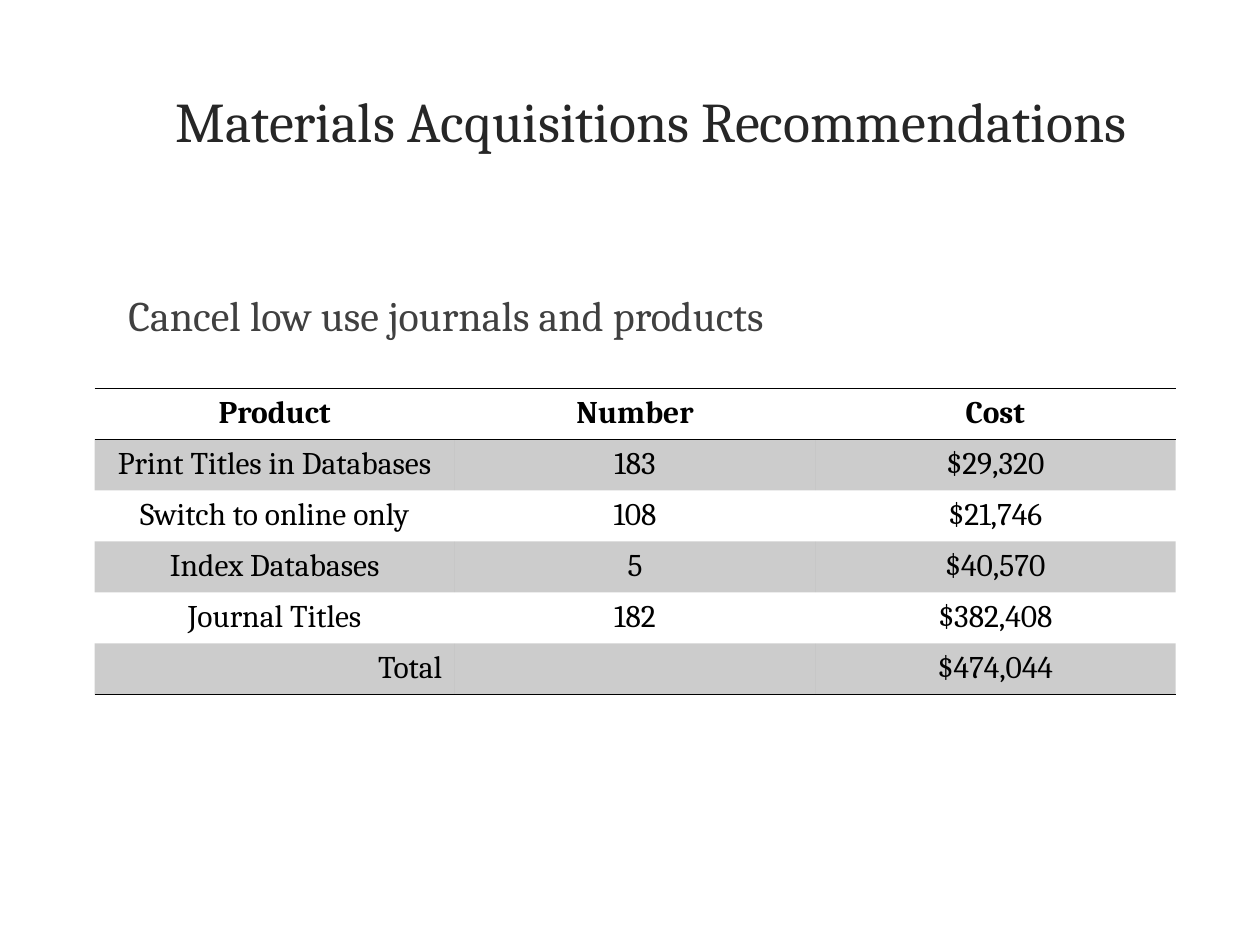
from dataclasses import dataclass

from lxml import etree
from pptx import Presentation
from pptx import util as u
from pptx.dml.color import RGBColor
from pptx.enum import text
from pptx.oxml import ns

COLORS = {"title": "262626", "body": "404040", "ink": "000000"}
FONT = "Cambria"
WIDTH, HEIGHT = u.Inches(10), u.Inches(7.5)
NO_STYLE = "{2D5ABB26-0587-4C30-8999-92F81FD0307C}"
CENTER, LEFT, RIGHT = text.PP_ALIGN.CENTER, text.PP_ALIGN.LEFT, text.PP_ALIGN.RIGHT
MIDDLE, TOP = text.MSO_ANCHOR.MIDDLE, text.MSO_ANCHOR.TOP


@dataclass
class Box:
    left: float
    top: float
    width: float
    height: float

    def emu(self) -> tuple[int, ...]:
        shares = (self.left, self.top, self.width, self.height)
        return tuple(round(v * side) for v, side in zip(shares, (WIDTH, HEIGHT) * 2))


@dataclass
class Row:
    cells: tuple[str, str, str]
    bold: bool = False
    shaded: bool = False
    rules: tuple[str, ...] = ()
    first_align: text.PP_ALIGN = CENTER


ROWS = [
    Row(("Product", "Number", "Cost"), bold=True, rules=("lnT", "lnB")),
    Row(("Print Titles in Databases", "183", "$29,320"), shaded=True),
    Row(("Switch to online only", "108", "$21,746")),
    Row(("Index Databases", "5", "$40,570"), shaded=True),
    Row(("Journal Titles", "182", "$382,408")),
    Row(("Total", "", "$474,044"), shaded=True, rules=("lnB",), first_align=RIGHT),
]


def write(tf, content: str, *, size: float, color: str, align=LEFT, bold=False) -> None:
    p = tf.paragraphs[0]
    p.alignment = align
    p.font.size = u.Pt(size)
    if not content:
        return
    r = p.add_run()
    r.text = content
    r.font.name = FONT
    r.font.size = u.Pt(size)
    r.font.bold = bold
    r.font.color.rgb = RGBColor.from_string(COLORS[color])


def add_text(s, box: Box, content: str, anchor=TOP, **fmt) -> None:
    tf = s.shapes.add_textbox(*box.emu()).text_frame
    tf.word_wrap = True
    tf.vertical_anchor = anchor
    write(tf, content, **fmt)


def shade(cell, color: str, percent: int) -> None:
    cell.fill.solid()
    cell.fill.fore_color.rgb = RGBColor.from_string(COLORS[color])
    rgb = cell._tc.tcPr.find(".//" + ns.qn("a:srgbClr"))
    etree.SubElement(rgb, ns.qn("a:alpha"), val=str(percent * 1000))


def add_rules(cell, edges: tuple[str, ...], color: str) -> None:
    tcPr = cell._tc.get_or_add_tcPr()
    for i, edge in enumerate(edges):
        ln = etree.Element(ns.qn(f"a:{edge}"), w=str(u.Pt(1)))
        fill = etree.SubElement(ln, ns.qn("a:solidFill"))
        etree.SubElement(fill, ns.qn("a:srgbClr"), val=COLORS[color])
        tcPr.insert(i, ln)


def add_cost_table(s, box: Box, rows: list[Row]) -> None:
    table = s.shapes.add_table(len(rows), len(rows[0].cells), *box.emu()).table
    table.first_row = table.horz_banding = False
    table._tbl.tblPr.find(ns.qn("a:tableStyleId")).text = NO_STYLE
    for i, row in enumerate(rows):
        for j, content in enumerate(row.cells):
            cell = table.cell(i, j)
            align = CENTER if j else row.first_align
            write(cell.text_frame, content, size=18, color="ink", align=align, bold=row.bold)
            if row.shaded:
                shade(cell, "ink", 20)
            else:
                cell.fill.background()
            add_rules(cell, row.rules, "ink")


def main() -> None:
    prs = Presentation()
    prs.slide_width, prs.slide_height = WIDTH, HEIGHT
    s = prs.slides.add_slide(prs.slide_layouts[6])
    add_text(s, Box(0.067, 0.044, 0.9, 0.167), "Materials Acquisitions Recommendations",
             anchor=MIDDLE, size=32, color="title", align=CENTER)
    add_text(s, Box(0.092, 0.3, 0.817, 0.576), "Cancel low use journals and products",
             size=24, color="body")
    add_cost_table(s, Box(0.075, 0.411, 0.858, 0.324), ROWS)
    prs.save("out.pptx")


if __name__ == "__main__":
    main()
